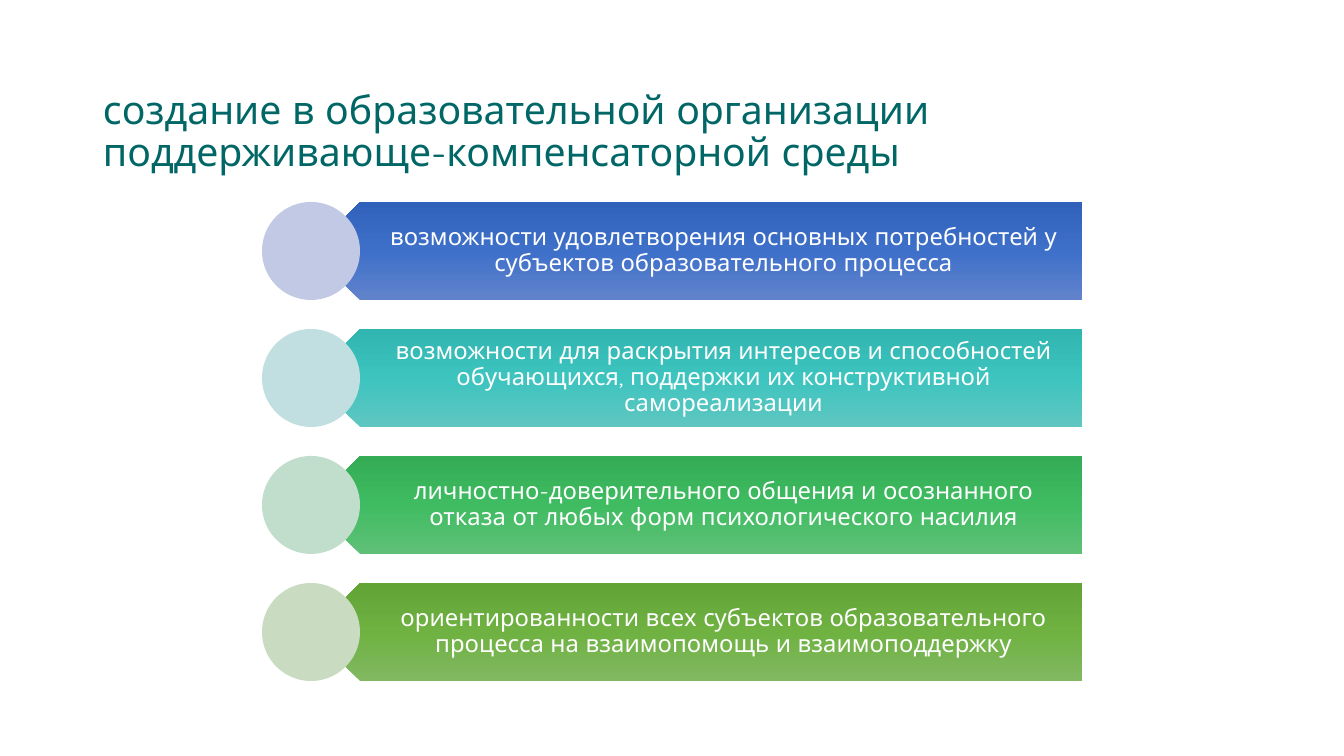
from copy import deepcopy

from pptx import Presentation
from pptx.dml.color import RGBColor
from pptx.enum.shapes import MSO_SHAPE
from pptx.enum.text import MSO_ANCHOR, PP_ALIGN
from pptx.util import Emu, Pt

ARROW, CIRCLE = MSO_SHAPE.PENTAGON, MSO_SHAPE.OVAL
MIDDLE = MSO_ANCHOR.MIDDLE
LEFT, CENTER = PP_ALIGN.LEFT, PP_ALIGN.CENTER

TITLE = "создание в образовательной организации\vподдерживающе-компенсаторной среды"

# text, gradient from top to bottom, circle colour
ITEMS = [
    ("возможности удовлетворения основных потребностей у субъектов образовательного процесса",
     ("6183CB", "3E70CA", "3062BB"), "C1C9E4"),
    ("возможности для раскрытия интересов и способностей обучающихся, "
     "поддержки их конструктивной самореализации",
     ("60C6C1", "3DC4BF", "30B5B0"), "C1DFE1"),
    ("личностно-доверительного общения и осознанного отказа от любых форм психологического насилия",
     ("60C077", "3FBC62", "33AC55"), "C1DECC"),
    ("ориентированности всех субъектов образовательного процесса на взаимопомощь и взаимоподдержку",
     ("81B861", "6FB242", "62A336"), "C9DBC1"),
]

THEME = {"font": "Quicksand", "title": "006666", "body": "FFFFFF",
         "title_size": 28, "body_size": 17}

PX = 914400 / 100.8
TOP, PITCH, SIZE = 202, 127, 98
RIGHT, DISC_X = 1082, 262
BAR_X = DISC_X + SIZE // 2
TEXT_X = BAR_X + SIZE // 4


def px(*nums):
    return [Emu(round(n * PX)) for n in nums]


def add_text(slide, text, box, pads, size, color, align):
    frame = slide.shapes.add_textbox(*px(*box)).text_frame
    frame.word_wrap = True
    frame.vertical_anchor = MIDDLE
    (frame.margin_left, frame.margin_top,
     frame.margin_right, frame.margin_bottom) = px(*pads)
    frame.text = text
    para = frame.paragraphs[0]
    para.alignment = align
    para.line_spacing = 0.9
    for run in para.runs:
        run.font.name = THEME["font"]
        run.font.size = Pt(THEME[size])
        run.font.color.rgb = RGBColor.from_string(THEME[color])


def add_plain(slide, kind, box):
    """Add a preset shape without line or shadow."""
    shape = slide.shapes.add_shape(kind, *px(*box))
    shape.shadow.inherit = False
    shape.line.fill.background()
    return shape


def shade(shape, colors):
    """Fill with a vertical gradient of three even stops."""
    fill = shape.fill
    fill.gradient()
    fill.gradient_angle = 270
    first = shape.element.spPr.xpath(".//a:gs")[0]
    first.addnext(deepcopy(first))
    for stop, color, place in zip(fill.gradient_stops, colors, (0, 0.5, 1)):
        stop.color.rgb = RGBColor.from_string(color)
        stop.position = place


def main():
    deck = Presentation()
    deck.slide_width, deck.slide_height = px(1344, 756)
    slide = deck.slides.add_slide(deck.slide_layouts[6])
    add_text(slide, TITLE, (93, 40, 1159, 186), (10, 5, 10, 5),
             "title_size", "title", LEFT)
    for row, (text, colors, tint) in enumerate(ITEMS):
        y = TOP + row * PITCH
        bar = add_plain(slide, ARROW, (BAR_X, y, RIGHT - BAR_X, SIZE))
        bar.rotation = 180
        shade(bar, colors)
        add_text(slide, text, (TEXT_X, y, RIGHT - TEXT_X, SIZE), (43, 7, 13, 7),
                 "body_size", "body", CENTER)
        disc = add_plain(slide, CIRCLE, (DISC_X, y, SIZE, SIZE))
        disc.fill.solid()
        disc.fill.fore_color.rgb = RGBColor.from_string(tint)
    deck.save("out.pptx")


if __name__ == "__main__":
    main()
